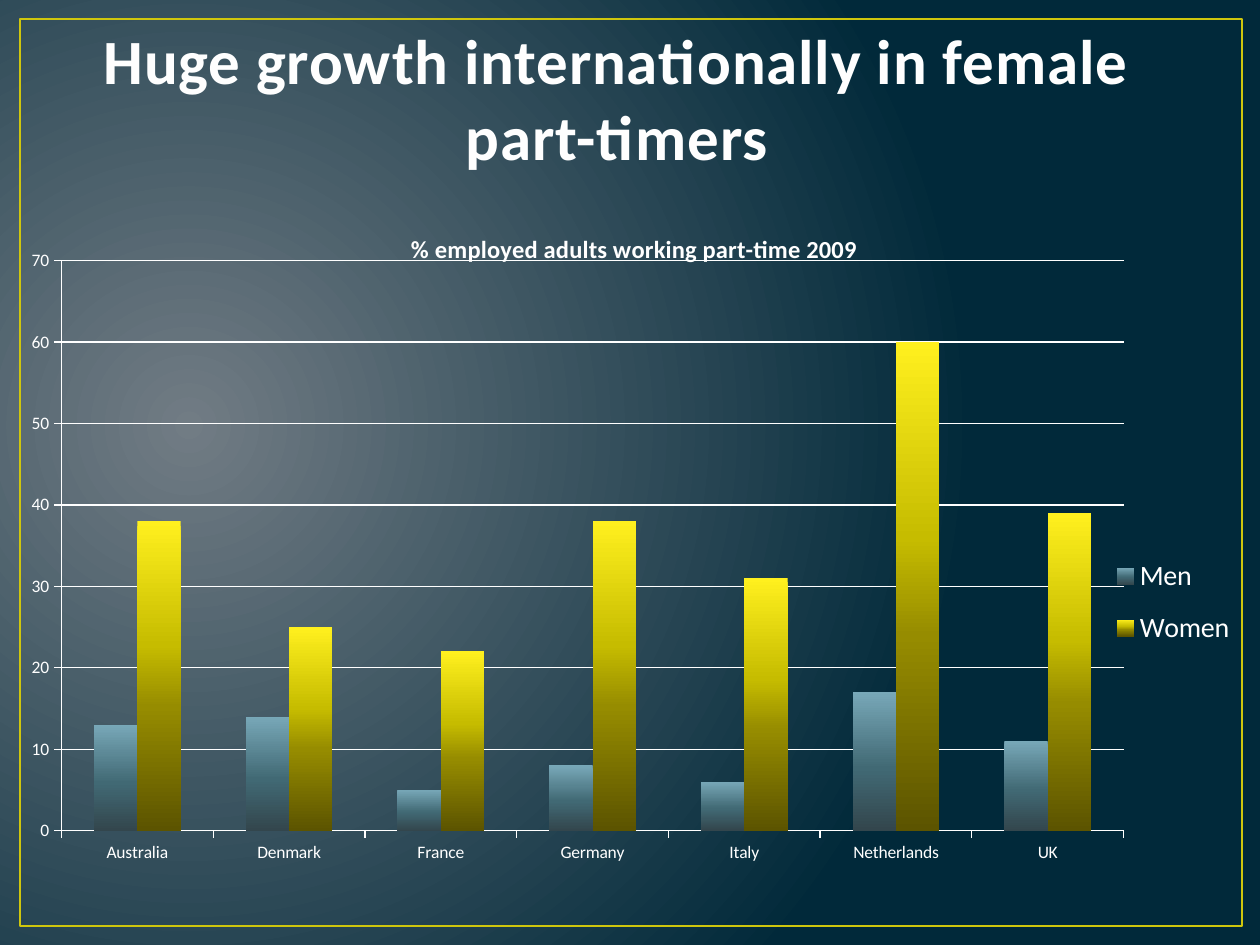
from pptx import Presentation
from pptx import util as u
from pptx.chart import data
from pptx.dml.color import RGBColor
from pptx.enum import chart as charts, shapes, text
from pptx.oxml import parse_xml
from pptx.oxml.ns import nsdecls, qn

FONT = "Calibri"
COLORS = {"white": "FFFFFF", "title": "FEFEFE", "frame": "CFC60D"}
BACKGROUND = [(0, "717C84"), (100, "01293A")]
COUNTRIES = ["Australia", "Denmark", "France", "Germany", "Italy", "Netherlands", "UK"]
SERIES = {
    "Men": ([13, 14, 5, 8, 6, 17, 11],
            [(0, "78A8B8"), (55, "416974"), (100, "33464D")]),
    "Women": ([38, 25, 22, 38, 31, 60, 39],
              [(0, "FFF01E"), (40, "C6BC00"), (60, "968C00"), (100, "5C5400")]),
}


def px(length):
    return u.Emu(round(length * 914400 / 126))


def rgb(name):
    return RGBColor.from_string(COLORS[name])


def gradient(stops, direction):
    marks = "".join(
        f'<a:gs pos="{place * 1000}"><a:srgbClr val="{color}"/></a:gs>'
        for place, color in stops
    )
    return f'<a:gradFill {nsdecls("a")} rotWithShape="1"><a:gsLst>{marks}</a:gsLst>{direction}</a:gradFill>'


def set_background(page):
    circle = ('<a:path path="circle"><a:fillToRect l="15000" t="50000" '
              'r="85000" b="60000"/></a:path>')
    fill = gradient(BACKGROUND, circle)
    page._element.cSld.insert(0, parse_xml(
        f'<p:bg {nsdecls("p")}><p:bgPr>{fill}<a:effectLst {nsdecls("a")}/></p:bgPr></p:bg>'))


def add_frame(page, left, top, width, height):
    frame = page.shapes.add_shape(
        shapes.MSO_SHAPE.RECTANGLE, px(left), px(top), px(width), px(height))
    frame.shadow.inherit = False
    frame.fill.background()
    frame.line.color.rgb = rgb("frame")
    frame.line.width = u.Pt(1.5)


def format_font(font, size, color="white", bold=False):
    font.name = FONT
    font.size = u.Pt(size)
    font.bold = bold
    font.color.rgb = rgb(color)


def add_text(page, words, left, top, width, height, size, color, bold=False, spacing=0):
    box = page.shapes.add_textbox(px(left), px(top), px(width), px(height))
    frame = box.text_frame
    frame.word_wrap = True
    frame.vertical_anchor = text.MSO_ANCHOR.BOTTOM
    para = frame.paragraphs[0]
    para.alignment = text.PP_ALIGN.CENTER
    span = para.add_run()
    span.text = words
    format_font(span.font, size, color, bold)
    span.font._element.set("spc", str(round(spacing * 100)))


def set_layout(parent, index, target="", **places):
    for old in parent.findall(qn("c:layout")):
        parent.remove(old)
    inner = f'<c:layoutTarget val="{target}"/>' if target else ""
    modes = "".join(f'<c:{key}Mode val="edge"/>' for key in ("x", "y"))
    values = "".join(f'<c:{key} val="{value}"/>' for key, value in places.items())
    parent.insert(index, parse_xml(
        f'<c:layout {nsdecls("c")}><c:manualLayout>{inner}{modes}{values}'
        '</c:manualLayout></c:layout>'))


def style_axis(axis):
    axis.major_tick_mark = charts.XL_TICK_MARK.OUTSIDE
    axis.minor_tick_mark = charts.XL_TICK_MARK.NONE
    axis.format.line.color.rgb = rgb("white")
    axis.format.line.width = u.Pt(0.75)
    format_font(axis.tick_labels.font, 10)


def add_columns(page, left, top, width, height):
    table = data.CategoryChartData()
    table.categories = COUNTRIES
    for name, (values, _) in SERIES.items():
        table.add_series(name, values)
    chart = page.shapes.add_chart(
        charts.XL_CHART_TYPE.COLUMN_CLUSTERED,
        px(left), px(top), px(width), px(height), table).chart
    format_font(chart.font, 10)

    plot = chart.plots[0]
    plot.gap_width = 150
    plot.overlap = 0
    plot.vary_by_categories = False
    for series in plot.series:
        fill = gradient(SERIES[series.name][1], '<a:lin ang="5400000" scaled="0"/>')
        series._element.get_or_add_spPr().insert(0, parse_xml(fill))

    style_axis(chart.category_axis)
    scale = chart.value_axis
    style_axis(scale)
    scale.minimum_scale, scale.maximum_scale, scale.major_unit = 0, 70, 10
    scale.has_major_gridlines = True
    scale.major_gridlines.format.line.color.rgb = rgb("white")
    scale.major_gridlines.format.line.width = u.Pt(0.75)

    chart.has_title = True
    title = chart.chart_title.text_frame
    title.text = "% employed adults working part-time 2009"
    format_font(title.paragraphs[0].runs[0].font, 14, bold=True)

    chart.has_legend = True
    chart.legend.position = charts.XL_LEGEND_POSITION.RIGHT
    chart.legend.include_in_layout = False
    format_font(chart.legend.font, 16)

    area = chart._chartSpace.chart.plotArea
    set_layout(area, 0, "inner", x=0.037, y=0.092, w=0.865, h=0.848)
    set_layout(chart.chart_title._element, 1, x=0.318, y=0.043)
    set_layout(chart.legend._element, 1, x=0.895, y=0.51, w=0.1, h=0.18)


def main():
    deck = Presentation()
    deck.slide_width, deck.slide_height = px(1260), px(945)
    page = deck.slides.add_slide(deck.slide_layouts[6])
    set_background(page)
    add_frame(page, 20, 19, 1222, 907)
    add_text(page, "Huge growth internationally in female part-timers",
             63, 79, 1108, 100, size=36, color="title", bold=True, spacing=0.5)
    add_columns(page, 16, 199, 1228, 672)
    deck.save("out.pptx")


if __name__ == "__main__":
    main()
